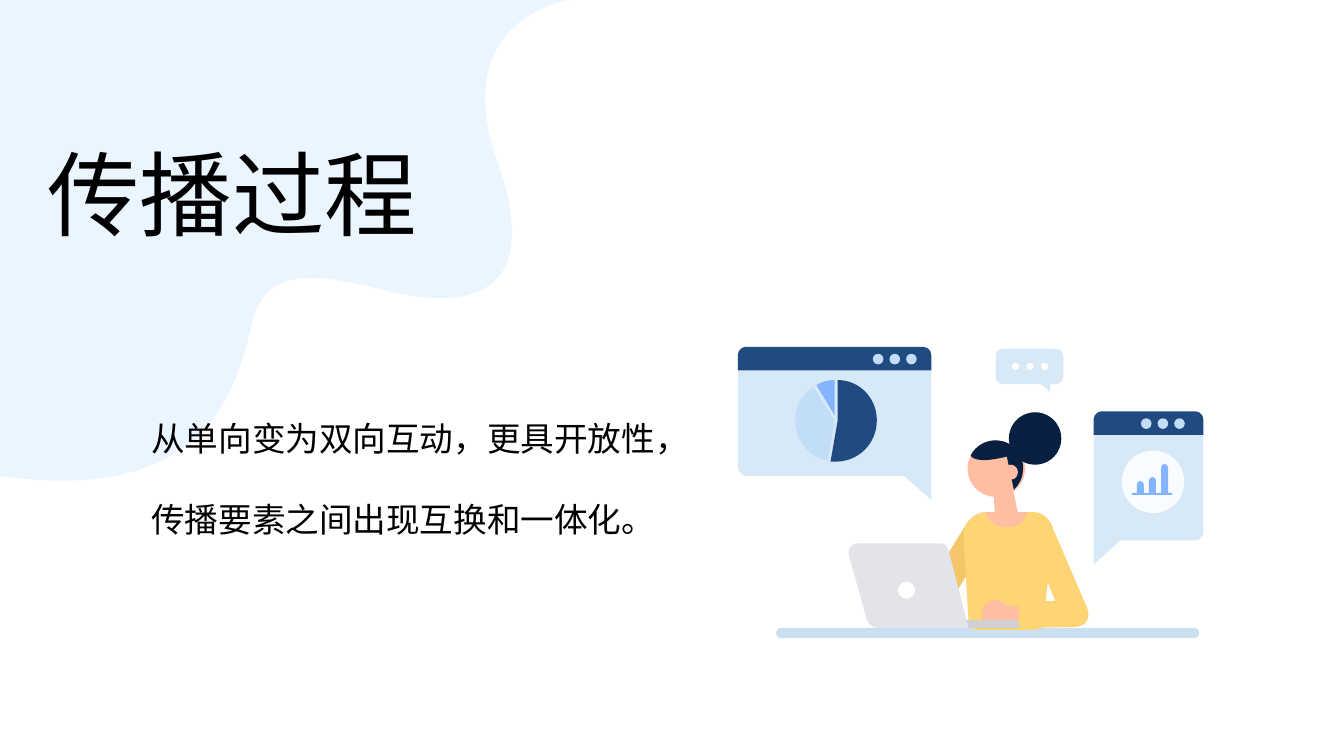
from lxml import etree
from pptx import Presentation
from pptx.dml.color import RGBColor
from pptx.enum.shapes import MSO_SHAPE
from pptx.enum.text import MSO_ANCHOR, MSO_AUTO_SIZE, PP_ALIGN
from pptx.oxml.ns import qn
from pptx.util import Cm, Pt

OVAL = MSO_SHAPE.OVAL
RECT = MSO_SHAPE.RECTANGLE
ROUNDED = MSO_SHAPE.ROUNDED_RECTANGLE
ROUND_TOP = MSO_SHAPE.ROUND_2_SAME_RECTANGLE
TOP = MSO_ANCHOR.TOP
NO_AUTOFIT = MSO_AUTO_SIZE.NONE
JUSTIFY = PP_ALIGN.JUSTIFY
LEFT = PP_ALIGN.LEFT

BLACK = RGBColor(0x00, 0x00, 0x00)
WHITE = RGBColor(0xFF, 0xFF, 0xFF)
PALE = RGBColor(0xEB, 0xF5, 0xFF)
DESK = RGBColor(0xCA, 0xDF, 0xEF)
PANEL = RGBColor(0xD7, 0xE8, 0xF7)
NAVY = RGBColor(0x21, 0x4A, 0x81)
SKY = RGBColor(0xC1, 0xDD, 0xF7)
DISC = RGBColor(0xF8, 0xFC, 0xFF)
BLUE = RGBColor(0x84, 0xB4, 0xFE)
HAIR = RGBColor(0x07, 0x20, 0x42)
SKIN = RGBColor(0xFF, 0xBD, 0xA1)
YELLOW = RGBColor(0xFF, 0xD4, 0x74)
OCHRE = RGBColor(0xF4, 0xC6, 0x69)
GREY = RGBColor(0xCF, 0xD1, 0xD3)
SILVER = RGBColor(0xE2, 0xE4, 0xE9)

FONT = "Noto Sans CJK SC"


def grid(n):
    """Length of n grid units, a hundred of which make 2.54 cm."""
    return Cm(2.54 * n / 100)


def paint(sp, color):
    sp.fill.solid()
    sp.fill.fore_color.rgb = color
    sp.line.fill.background()
    sp.shadow.inherit = False
    return sp


def add_preset(shapes, kind, box, color, radius=None):
    sp = shapes.add_shape(kind, *map(grid, box))
    if radius is not None:
        sp.adjustments[0] = radius
    return paint(sp, color)


def bend(sp, steps):
    """Turn each three segments that stand for a curve into one cubic curve."""
    segments = sp.element.iter(qn("a:lnTo"))
    segments = iter(list(segments))
    for step in steps:
        segment = next(segments)
        if len(step) == 6:
            curve = etree.Element(qn("a:cubicBezTo"))
            segment.addprevious(curve)
            for part in (segment, next(segments), next(segments)):
                curve.append(part[0])
                part.getparent().remove(part)


def add_outline(shapes, steps, color):
    """Closed outline; a step is a point (x, y) or a cubic curve of six numbers."""
    points = [(grid(step[i]), grid(step[i + 1]))
              for step in steps for i in range(0, len(step), 2)]
    builder = shapes.build_freeform(*points[0])
    builder.add_line_segments(points[1:], close=True)
    sp = builder.convert_to_shape()
    bend(sp, steps[1:])
    return paint(sp, color)


def add_dots(shapes, left, top, size, step, color):
    for i in range(3):
        add_preset(shapes, OVAL, (left + i * step, top, size, size), color)


def add_window(shapes, left, top, width, dots_left, tail_left):
    """Browser window shaped as a speech bubble with its tail on one side."""
    tail_x, far_x, inward = (left, left + width, 1) if tail_left else (left + width, left, -1)
    head, bottom = top + 23, top + 128
    add_outline(shapes, [
        (tail_x, bottom + 24), (tail_x, head), (far_x, head), (far_x, bottom - 9),
        (far_x, bottom - 4, far_x - 4 * inward, bottom, far_x - 9 * inward, bottom),
        (tail_x + 27 * inward, bottom)], PANEL)
    add_preset(shapes, ROUND_TOP, (left, top, width, 23.5), NAVY, 0.35)
    add_dots(shapes, dots_left, top + 7, 10.5, 16.5, SKY)


def add_pie(shapes):
    add_outline(shapes, [(831, 418), (831, 377), (853, 377, 870, 395, 870, 417),
                         (870, 440, 852, 458, 829, 458), (824, 458),
                         (826, 447)], NAVY)
    add_outline(shapes, [(828, 412), (810, 382), (815, 379, 821, 377, 828, 377)], BLUE)
    add_outline(shapes, [(807, 384), (828, 417), (821, 457),
                         (803, 453, 790, 438, 789, 419), (789, 416),
                         (789, 402, 797, 390, 807, 384)], SKY)


def add_bars(shapes):
    add_preset(shapes, OVAL, (1113, 447, 62, 62), DISC)
    base = 489
    steps = [(1124, base)]
    for left, top in ((1128, 477), (1140, 473), (1152, 460)):
        right = left + 7
        steps += [(left, base), (left, top + 4),
                  (left, top - 1, right, top - 1, right, top + 4), (right, base)]
    steps += [(1163, base), (1163, 491), (1123, 491), (1123, base)]
    add_outline(shapes, steps, BLUE)


def add_message(shapes):
    add_preset(shapes, ROUNDED, (988, 346, 67, 35), PANEL, 0.2)
    add_outline(shapes, [(1042, 376), (1042, 389), (1027, 376)], PANEL)
    add_dots(shapes, 1004, 360, 7, 14.5, WHITE)


def add_body(shapes):
    add_outline(shapes, [(924, 602), (918, 598, 916, 590, 920, 583), (960, 518),
                         (964, 512, 972, 510, 978, 513), (985, 517, 986, 526, 983, 532),
                         (943, 597), (939, 603, 930, 605, 924, 602)], OCHRE)
    add_outline(shapes, [(986, 491), (988, 526), (1013, 524), (1003, 474)], SKIN)
    add_preset(shapes, OVAL, (960, 437, 57, 56), SKIN)
    add_outline(shapes, [(979, 508), (1025, 508), (1039, 508, 1046, 522, 1045, 530),
                         (1035, 618), (1034, 622, 1031, 625, 1026, 625), (970, 625),
                         (965, 625, 962, 621, 961, 617), (956, 533),
                         (955, 520, 965, 508, 979, 508)], YELLOW)
    add_outline(shapes, [(1019, 508), (978, 508), (978, 508, 980, 523, 999, 523),
                         (1017, 523, 1019, 508, 1019, 508)], SKIN)
    add_preset(shapes, OVAL, (1001, 409, 52, 52), HAIR)
    add_outline(shapes, [(976, 603), (979, 596, 987, 593, 994, 597),
                         (996, 598, 998, 599, 999, 601), (1019, 602), (1026, 615),
                         (998, 617), (994, 622, 987, 623, 982, 621),
                         (975, 617, 972, 610, 976, 603)], SKIN)


def add_laptop(shapes):
    add_preset(shapes, RECT, (952, 615, 60, 8), GREY)
    add_outline(shapes, [(961, 623), (871, 623), (866, 623, 861, 619, 860, 614),
                         (842, 550), (841, 545, 845, 539, 851, 539), (934, 539),
                         (937, 539, 940, 542, 941, 545)], SILVER)
    add_preset(shapes, OVAL, (891, 577, 17, 17), WHITE)


def add_arm_and_hair(shapes):
    add_outline(shapes, [(1011, 623), (1067, 622), (1070, 622, 1073, 621, 1076, 619),
                         (1080, 615, 1081, 609, 1079, 604), (1043, 520),
                         (1040, 514, 1033, 511, 1027, 513), (1020, 516, 1017, 523, 1020, 530),
                         (1047, 596), (1011, 597)], YELLOW)
    add_outline(shapes, [(990, 437), (979, 436, 968, 442, 963, 452), (965, 454),
                         (970, 457, 979, 458, 999, 453), (1003, 472), (1006, 486),
                         (1011, 481, 1015, 474, 1015, 467),
                         (1017, 452, 1005, 438, 990, 437)], HAIR)
    add_preset(shapes, OVAL, (996, 461, 14, 15), SKIN)


def fill_placeholder(sp, box, text, size, spacing, align):
    sp.left, sp.top, sp.width, sp.height = map(grid, box)
    tf = sp.text_frame
    tf.text = text
    tf.word_wrap = True
    tf.auto_size = NO_AUTOFIT
    tf.vertical_anchor = TOP
    p = tf.paragraphs[0]
    p.alignment = align
    p.line_spacing = Pt(spacing)
    p.space_before = Pt(0)
    p.font.size = Pt(size)
    p.font.name = FONT
    p.font.color.rgb = BLACK
    for props in sp.element.iter(qn("a:defRPr")):
        etree.SubElement(props, qn("a:ea")).set("typeface", FONT)
        props.addprevious(etree.Element(qn("a:buNone")))
        props.getparent().set("marL", "0")
        props.getparent().set("indent", "0")
    return tf


def main():
    prs = Presentation()
    prs.slide_width, prs.slide_height = Cm(33.87), Cm(19.05)
    s = prs.slides.add_slide(prs.slide_layouts[1])
    title, body = s.placeholders

    blob = add_outline(s.shapes, [
        (564, 0), (564, 0, 444, 18, 493, 159), (543, 300, 458, 306, 386, 289),
        (315, 271, 265, 264, 251, 317), (237, 370, 218, 504, -1, 472), (-1, 0)], PALE)
    scene = s.shapes.add_group_shape()
    shapes = scene.shapes
    add_preset(shapes, ROUNDED, (770, 623, 420, 10), DESK, 0.5)
    add_window(shapes, 1085, 408, 109, 1132, tail_left=True)
    add_bars(shapes)
    add_window(shapes, 732, 344, 192, 866, tail_left=False)
    add_pie(shapes)
    add_message(shapes)
    add_body(shapes)
    add_laptop(shapes)
    add_arm_and_hair(shapes)
    for sp in (blob, scene):
        title.element.addprevious(sp.element)

    fill_placeholder(title, (37, 124, 492, 121), "传播过程", 66, 84, JUSTIFY)
    tf = fill_placeholder(body, (139, 374, 559, 207),
                          "从单向变为双向互动，更具开放性，传播要素之间出现互换和一体化。",
                          24, 58, LEFT)
    tf.margin_left, tf.margin_right = Cm(0.28), Cm(0.23)
    tf.margin_top = tf.margin_bottom = 0
    prs.save("out.pptx")


if __name__ == "__main__":
    main()
